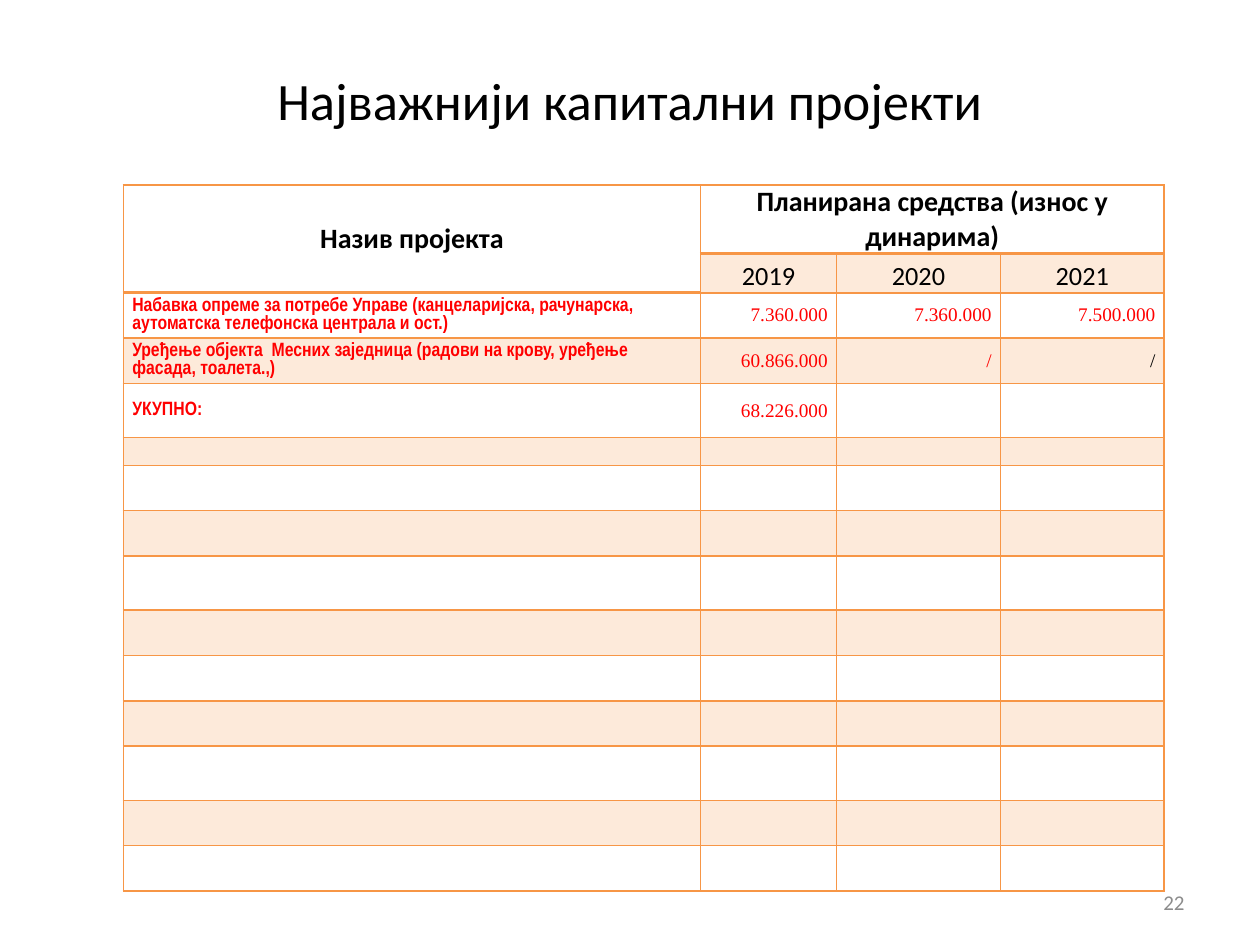
from lxml.etree import SubElement
from pptx import Presentation
from pptx.dml.color import RGBColor
from pptx.enum.text import MSO_ANCHOR, PP_ALIGN
from pptx.oxml.ns import qn
from pptx.util import Inches, Pt

WIDE, HIGH = Inches(10), Inches(7.5)
HUES = {"ink": "000000", "red": "FF0000", "gray": "8C8C8C",
        "line": "F79646", "band": "FDEADA"}
COLS = [4.58, 1.08, 1.3, 1.3]
ROWS = [0.54, 0.31] + [0.36, 0.36, 0.43, 0.22] + [0.36, 0.36, 0.43, 0.36] * 2 + [0.36]
HEAD = ["Назив пројекта", "Планирана средства (износ у динарима)"]
YEARS = ["2019", "2020", "2021"]
ITEMS = [
    ["Набавка опреме за потребе Управе (канцеларијска, рачунарска, "
     "аутоматска телефонска централа и ост.)", "7.360.000", "7.360.000", "7.500.000"],
    ["Уређење објекта  Месних заједница (радови на крову, уређење "
     "фасада, тоалета.,)", "60.866.000", "/", "/"],
    ["УКУПНО:", "68.226.000", "", ""],
]


def write(frame, text, size, face="Calibri", hue="ink", bold=False, align=PP_ALIGN.CENTER):
    """Put one styled paragraph in a text frame."""
    frame.text = text
    para = frame.paragraphs[0]
    para.alignment = align
    for run in para.runs:
        font = run.font
        font.size, font.name, font.bold = Pt(size), face, bold
        font.color.rgb = RGBColor.from_string(HUES[hue])


def add_label(slide, box, text, size, hue, align):
    """Add a text box placed by shares of the slide's size."""
    left, top, width, height = box
    frame = slide.shapes.add_textbox(
        int(left * WIDE), int(top * HIGH), int(width * WIDE), int(height * HIGH)).text_frame
    frame.word_wrap = True
    frame.vertical_anchor = MSO_ANCHOR.MIDDLE
    write(frame, text, size, hue=hue, align=align)


def rule(cell, base):
    """Draw the four borders of a cell, the bottom one at a given width."""
    props = cell._tc.get_or_add_tcPr()
    for spot, (side, width) in enumerate(zip("LRTB", [1, 1, 1, base])):
        line = SubElement(props, qn(f"a:ln{side}"), w=str(Pt(width)))
        fill = SubElement(line, qn("a:solidFill"))
        SubElement(fill, qn("a:srgbClr"), val=HUES["line"])
        props.insert(spot, line)


def dress(cell, row):
    """Give a cell its insets, band fill, borders and blank text size."""
    cell.margin_left = cell.margin_right = Inches(0.07)
    cell.margin_top = cell.margin_bottom = 0
    cell.vertical_anchor = MSO_ANCHOR.MIDDLE
    if row % 2:
        cell.fill.solid()
        cell.fill.fore_color.rgb = RGBColor.from_string(HUES["band"])
    else:
        cell.fill.background()
    rule(cell, 2 if row == 0 else 1)
    cell.text_frame.paragraphs[0]._p.get_or_add_endParaRPr().set("sz", "1100")


def fill_head(table):
    """Merge and write the two heading rows."""
    table.cell(0, 0).merge(table.cell(1, 0))
    table.cell(0, 1).merge(table.cell(0, 3))
    for col, text in enumerate(HEAD):
        write(table.cell(0, col).text_frame, text, 16, bold=True)
    table.cell(0, 1).vertical_anchor = MSO_ANCHOR.BOTTOM
    for col, year in enumerate(YEARS, 1):
        cell = table.cell(1, col)
        cell.vertical_anchor = MSO_ANCHOR.BOTTOM
        write(cell.text_frame, year, 15)


def fill_items(table):
    """Write the project names and their sums."""
    for row, (name, *sums) in enumerate(ITEMS, 2):
        write(table.cell(row, 0).text_frame, name, 11, "Arial Narrow", "red",
              True, PP_ALIGN.LEFT)
        for col, text in enumerate(sums, 1):
            if text:
                hue = "ink" if (row, col) == (3, 3) else "red"
                write(table.cell(row, col).text_frame, text, 11, "Times New Roman",
                      hue, align=PP_ALIGN.RIGHT)


def add_grid(slide):
    """Add the table of projects."""
    table = slide.shapes.add_table(
        len(ROWS), len(COLS), Inches(0.98), Inches(1.47),
        Inches(sum(COLS)), Inches(sum(ROWS))).table
    for col, width in zip(table.columns, COLS):
        col.width = Inches(width)
    for row, height in enumerate(ROWS):
        table.rows[row].height = Inches(height)
        for col in range(len(COLS)):
            dress(table.cell(row, col), row)
    fill_head(table)
    fill_items(table)


def main():
    """Build and save the slide."""
    deck = Presentation()
    deck.slide_width, deck.slide_height = WIDE, HIGH
    slide = deck.slides.add_slide(deck.slide_layouts[6])
    add_grid(slide)
    add_label(slide, (0.72, 0.93, 0.23, 0.05), "22", 12, "gray", PP_ALIGN.RIGHT)
    add_label(slide, (0.05, 0.04, 0.9, 0.13), "Најважнији капитални пројекти",
              30, "ink", PP_ALIGN.CENTER)
    deck.save("out.pptx")


if __name__ == "__main__":
    main()
